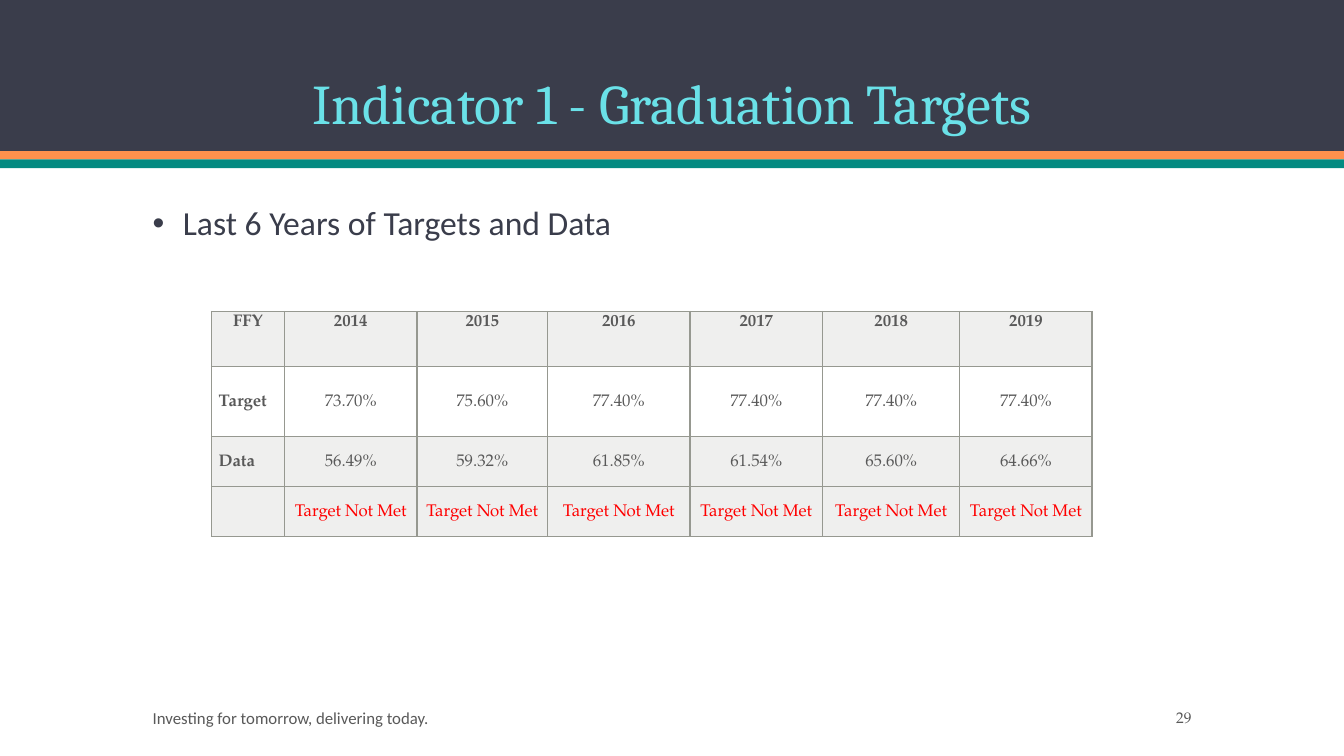
from lxml.etree import SubElement
from pptx import Presentation
from pptx.dml.color import RGBColor
from pptx.enum.shapes import MSO_SHAPE
from pptx.enum.text import MSO_ANCHOR, PP_ALIGN
from pptx.oxml.ns import qn
from pptx.util import Cm, Pt

COLORS = {
    "navy": "3A3D4B", "orange": "FF914D", "teal": "048A81", "aqua": "6AE1E8",
    "gray": "595959", "red": "FF0000", "shade": "EFEFEE", "border": "969890",
}
SERIF = "TeX Gyre Pagella"


def write(frame, text, color, font, para_format):
    """Fill the first paragraph of a text frame and return the paragraph."""
    para = frame.paragraphs[0]
    for name, value in para_format.items():
        setattr(para, name, value)
    span = para.add_run()
    span.text = text
    for name, value in font.items():
        setattr(span.font, name, value)
    span.font.color.rgb = RGBColor.from_string(COLORS[color])
    return para


def add_borders(cell):
    properties = cell._tc.get_or_add_tcPr()
    for side in ("lnL", "lnR", "lnT", "lnB"):
        line = SubElement(properties, qn(f"a:{side}"), w=str(Pt(1)))
        fill = SubElement(line, qn("a:solidFill"))
        SubElement(fill, qn("a:srgbClr"), val=COLORS["border"])


deck = Presentation()
deck.slide_width, deck.slide_height = Cm(33.87), Cm(19.05)
slide = deck.slides.add_slide(deck.slide_layouts[6])

# Header bands
for top, height, color in [(0, 3.81, "navy"), (3.81, 0.21, "orange"), (4.02, 0.22, "teal")]:
    band = slide.shapes.add_shape(MSO_SHAPE.RECTANGLE, 0, Cm(top), deck.slide_width, Cm(height))
    band.shadow.inherit = False
    band.fill.solid()
    band.fill.fore_color.rgb = RGBColor.from_string(COLORS[color])
    band.line.fill.background()

# Title, body line, footer and slide number
texts = [
    ("Indicator 1 - Graduation Targets", (3.6, 0.71, 26.67, 2.87), MSO_ANCHOR.BOTTOM, "aqua",
     {"name": "Cambria", "size": Pt(40)}, {"alignment": PP_ALIGN.CENTER, "line_spacing": 0.9}),
    ("Last 6 Years of Targets and Data", (3.6, 5.08, 26.67, 12.07), MSO_ANCHOR.TOP, "navy",
     {"name": "Calibri", "size": Pt(24)}, {"line_spacing": 0.9, "space_before": Pt(18)}),
    ("Investing for tomorrow, delivering today.", (3.6, 17.7, 17.35, 0.76), MSO_ANCHOR.MIDDLE,
     "gray", {"name": "Calibri", "size": Pt(12)}, {}),
    ("29", (26.47, 17.7, 3.81, 0.76), MSO_ANCHOR.MIDDLE, "gray",
     {"name": SERIF, "size": Pt(11)}, {"alignment": PP_ALIGN.RIGHT}),
]
for text, place, anchor, color, font, para_format in texts:
    box = slide.shapes.add_textbox(*map(Cm, place))
    box.text_frame.word_wrap = True
    box.text_frame.vertical_anchor = anchor
    para = write(box.text_frame, text, color, font, para_format)
    if text.startswith("Last"):
        bullet = para._p.get_or_add_pPr()
        bullet.set("marL", str(Cm(0.76)))
        bullet.set("indent", str(-Cm(0.76)))
        SubElement(bullet, qn("a:buFont"), typeface="Arial")
        SubElement(bullet, qn("a:buChar"), char="•")

# Targets table
rows = [
    ["FFY", "2014", "2015", "2016", "2017", "2018", "2019"],
    ["Target", "73.70%", "75.60%", "77.40%", "77.40%", "77.40%", "77.40%"],
    ["Data", "56.49%", "59.32%", "61.85%", "61.54%", "65.60%", "64.66%"],
    [""] + ["Target Not Met"] * 6,
]
column_widths = [1.84, 3.34, 3.29, 3.59, 3.34, 3.46, 3.33]
row_heights = [1.38, 1.77, 1.26, 1.26]
table = slide.shapes.add_table(
    len(rows), len(column_widths), Cm(5.33), Cm(7.85),
    Cm(sum(column_widths)), Cm(sum(row_heights))).table
table.first_row = table.horz_banding = False
for column, width in zip(table.columns, column_widths):
    column.width = Cm(width)
for row, height in zip(table.rows, row_heights):
    row.height = Cm(height)

cell_format = {"margin_left": Cm(0.18), "margin_right": Cm(0.18), "margin_top": 0, "margin_bottom": 0}
for r, values in enumerate(rows):
    for c, value in enumerate(values):
        cell = table.cell(r, c)
        for name, setting in cell_format.items():
            setattr(cell, name, setting)
        cell.vertical_anchor = MSO_ANCHOR.MIDDLE if r else MSO_ANCHOR.TOP
        add_borders(cell)
        if r == 1:
            cell.fill.background()
        else:
            cell.fill.solid()
            cell.fill.fore_color.rgb = RGBColor.from_string(COLORS["shade"])
        if value:
            write(cell.text_frame, value, "red" if r == 3 else "gray",
                  {"name": SERIF, "size": Pt(12), "bold": r == 0 or c == 0},
                  {"alignment": PP_ALIGN.LEFT if r and c == 0 else PP_ALIGN.CENTER,
                   "line_spacing": 1.15, "space_before": Pt(3), "space_after": Pt(3)})

deck.save("out.pptx")
